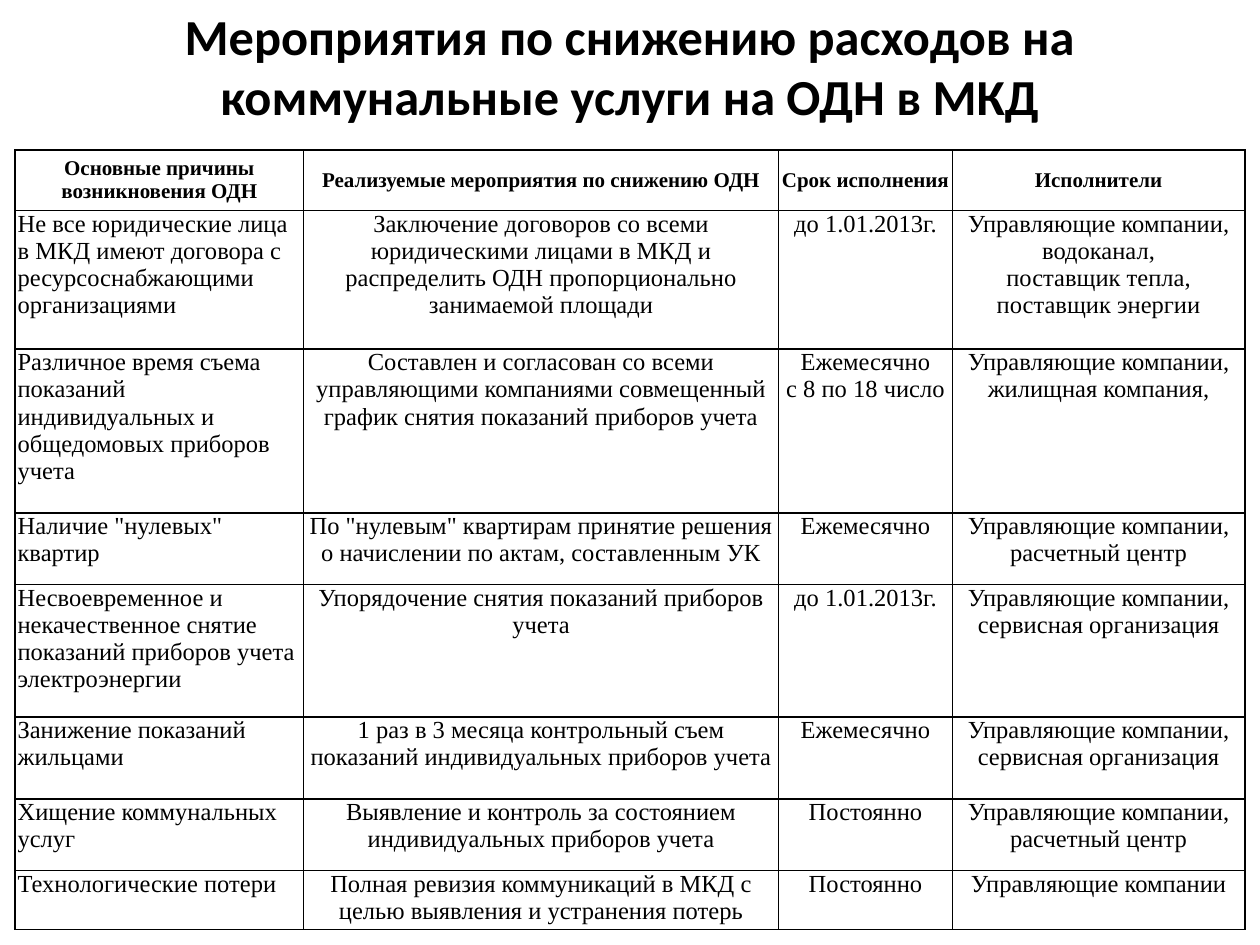
from lxml import etree
from pptx import Presentation
from pptx.dml.color import RGBColor
from pptx.enum import text
from pptx.oxml.ns import qn
from pptx.util import Inches, Pt

BLACK = RGBColor(0, 0, 0)
WHITE = RGBColor(255, 255, 255)

TITLE = "Мероприятия по снижению расходов на коммунальные услуги на ОДН в МКД"
HEADER = ("Основные причины возникновения ОДН", "Реализуемые мероприятия по снижению ОДН",
          "Срок исполнения", "Исполнители")
MANAGERS = "Управляющие компании"
# Each measure: cause, action, deadline, performers
MEASURES = [
    ("Не все юридические лица в МКД имеют договора с ресурсоснабжающими организациями",
     "Заключение договоров со всеми юридическими лицами в МКД и распределить ОДН "
     "пропорционально занимаемой площади",
     "до 1.01.2013г.",
     MANAGERS + ", водоканал,\nпоставщик тепла,\nпоставщик энергии"),
    ("Различное время съема показаний индивидуальных и общедомовых приборов учета",
     "Составлен и согласован со всеми управляющими компаниями совмещенный график "
     "снятия показаний приборов учета",
     "Ежемесячно\nс 8 по 18 число", MANAGERS + ", жилищная компания,"),
    ('Наличие "нулевых" квартир',
     'По "нулевым" квартирам принятие решения о начислении по актам, составленным УК',
     "Ежемесячно", MANAGERS + ", расчетный центр"),
    ("Несвоевременное и некачественное снятие показаний приборов учета электроэнергии",
     "Упорядочение снятия показаний приборов учета",
     "до 1.01.2013г.", MANAGERS + ", сервисная организация"),
    ("Занижение показаний жильцами",
     "1 раз в 3 месяца контрольный съем показаний индивидуальных приборов учета",
     "Ежемесячно", MANAGERS + ", сервисная организация"),
    ("Хищение коммунальных услуг",
     "Выявление и контроль за состоянием индивидуальных приборов учета",
     "Постоянно", MANAGERS + ", расчетный центр"),
    ("Технологические потери",
     "Полная ревизия коммуникаций в МКД с целью выявления и устранения потерь",
     "Постоянно", MANAGERS),
]
COLUMNS = (2.29, 3.77, 1.38, 2.32)
ROWS = (0.48, 1.1, 1.3, 0.57, 1.05, 0.65, 0.57, 0.43)
MARGIN = 0.12
TABLE_TOP = 1.19


def style(paragraph, name, size, bold, alignment):
    paragraph.alignment = alignment
    font = paragraph.font
    font.name, font.size, font.bold = name, Pt(size), bold
    font.color.rgb = BLACK


def add_borders(cell):
    properties = cell._tc.get_or_add_tcPr()
    for index, side in enumerate(("a:lnL", "a:lnR", "a:lnT", "a:lnB")):
        line = etree.Element(qn(side), w=str(Pt(1)))
        fill = etree.SubElement(line, qn("a:solidFill"))
        etree.SubElement(fill, qn("a:srgbClr"), val=str(BLACK))
        properties.insert(index, line)


def fill_cell(cell, content, is_header, is_cause):
    cell.margin_left = cell.margin_right = Inches(0.02)
    cell.margin_top = cell.margin_bottom = 0
    cell.vertical_anchor = text.MSO_ANCHOR.MIDDLE if is_header else text.MSO_ANCHOR.TOP
    cell.fill.solid()
    cell.fill.fore_color.rgb = WHITE
    add_borders(cell)
    cell.text = content
    left = is_cause and not is_header
    for paragraph in cell.text_frame.paragraphs:
        style(paragraph, "Times New Roman", 12 if is_header else 14, is_header,
              text.PP_ALIGN.LEFT if left else text.PP_ALIGN.CENTER)


def main():
    presentation = Presentation()
    presentation.slide_width, presentation.slide_height = Inches(10), Inches(7.5)
    slide = presentation.slides.add_slide(presentation.slide_layouts[6])
    width = Inches(sum(COLUMNS))

    # Title
    title = slide.shapes.add_textbox(Inches(MARGIN), Inches(0.05), width, Inches(0.94))
    frame = title.text_frame
    frame.word_wrap = True
    frame.vertical_anchor = text.MSO_ANCHOR.MIDDLE
    frame.text = TITLE
    style(frame.paragraphs[0], "Calibri", 28.8, True, text.PP_ALIGN.CENTER)

    # Table of measures
    table = slide.shapes.add_table(len(ROWS), len(COLUMNS), Inches(MARGIN),
                                   Inches(TABLE_TOP), width, Inches(sum(ROWS))).table
    for column, size in zip(table.columns, COLUMNS):
        column.width = Inches(size)
    for row, size in zip(table.rows, ROWS):
        row.height = Inches(size)
    for r, contents in enumerate([HEADER] + MEASURES):
        for c, content in enumerate(contents):
            fill_cell(table.cell(r, c), content, r == 0, c == 0)

    presentation.save("out.pptx")


if __name__ == "__main__":
    main()
